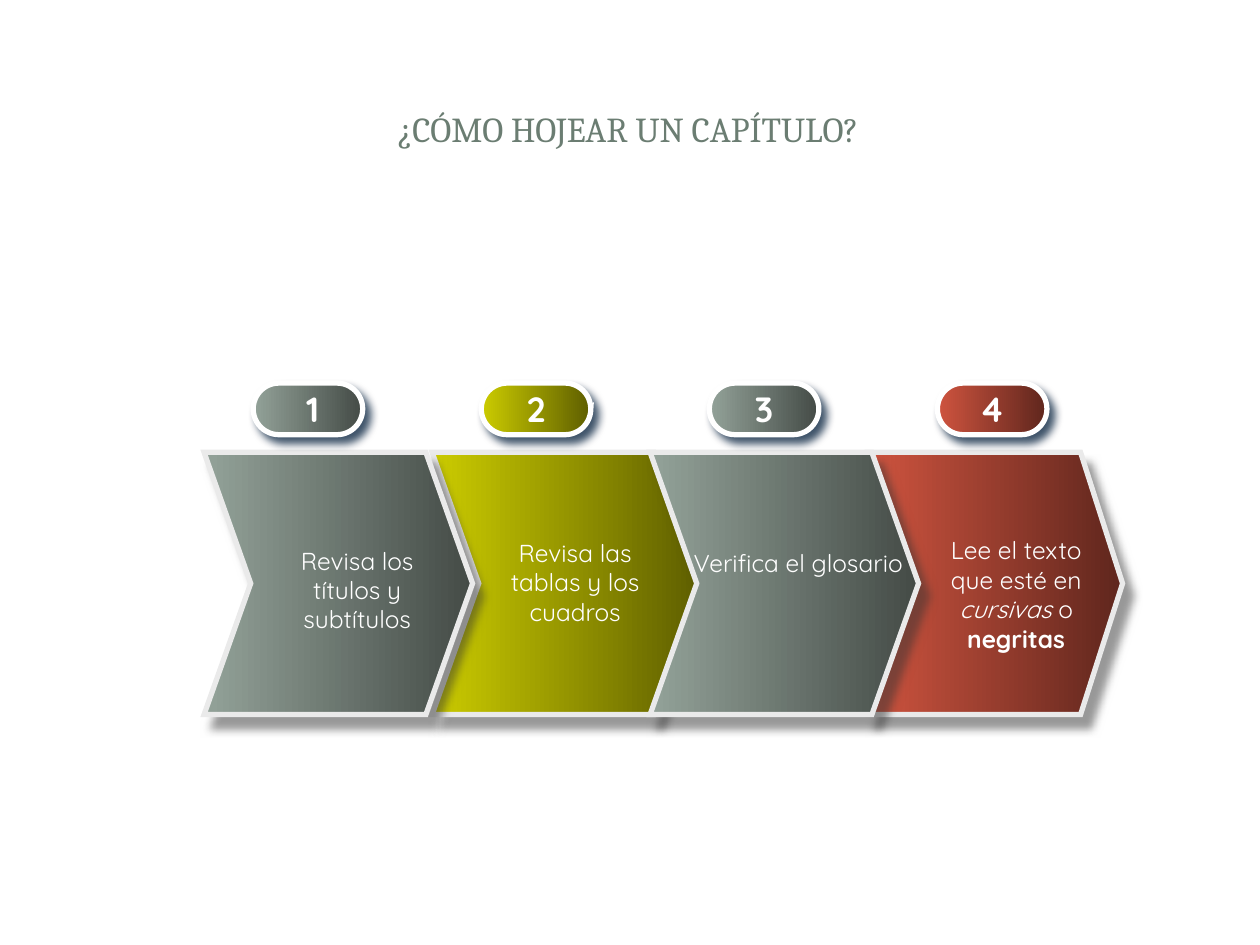
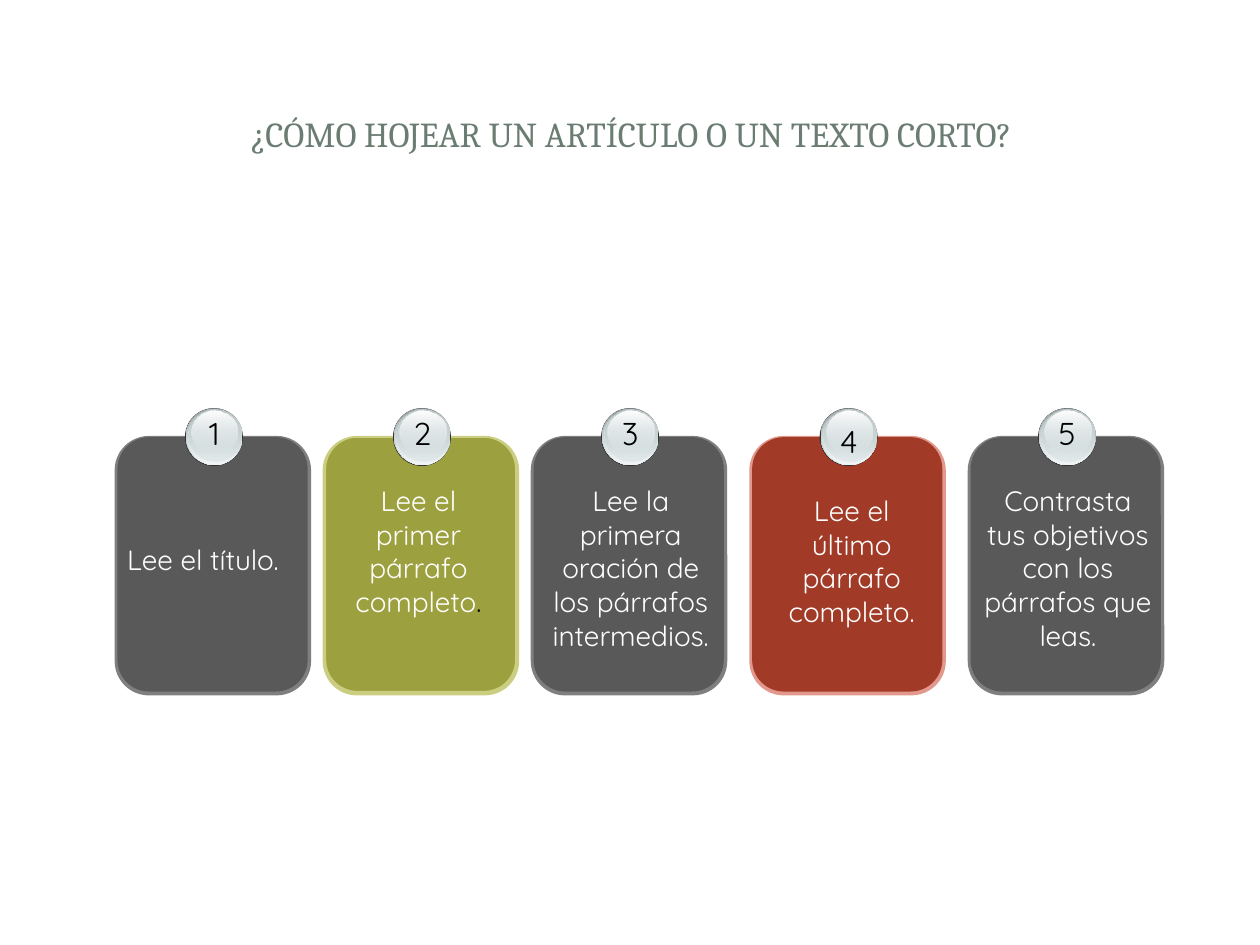
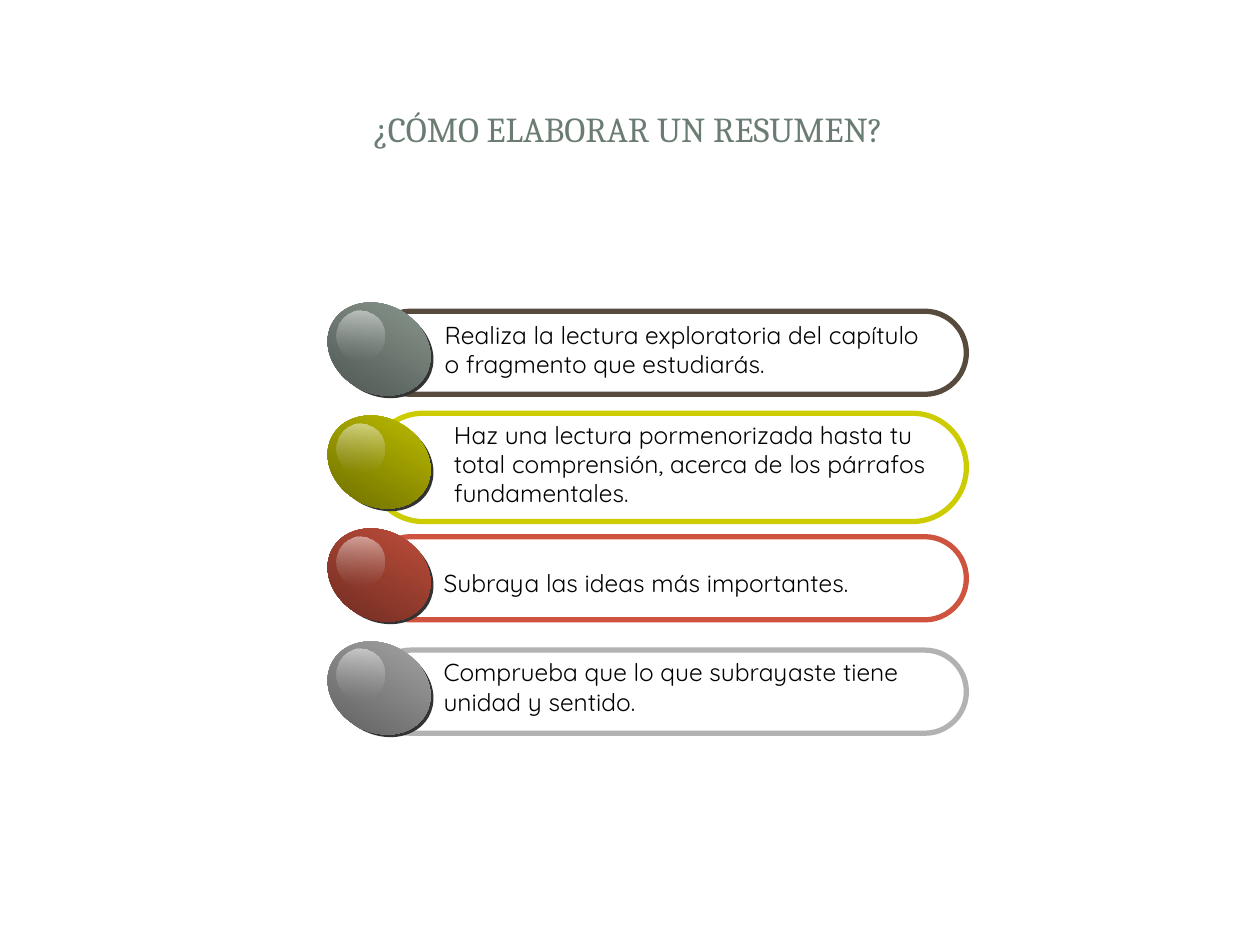
"""Build three slides on skimming chapters, skimming articles and writing summaries."""
from dataclasses import dataclass
from typing import NamedTuple

from lxml.etree import SubElement
from pptx import Presentation
from pptx.dml.color import RGBColor
from pptx.enum.shapes import MSO_SHAPE
from pptx.enum.text import MSO_ANCHOR, PP_ALIGN
from pptx.oxml.ns import qn
from pptx.shapes.autoshape import Shape
from pptx.slide import Slide
from pptx.util import Pt

COLORS = {
    "white": "FFFFFF", "black": "000000", "title": "6B7D72", "edge": "EAEAEA",
    "sage": "93A299", "sage_dark": "444B46", "lime": "CCCC00", "lime_dark": "5E5E00",
    "red": "CF543F", "red_dark": "5F261D", "silver": "B2B2B2", "silver_dark": "525252",
    "brown": "564B3C", "shade": "333333", "navy": "001D3A",
    "gray_card": "595959", "gray_rim": "7F7F7F", "olive_card": "9DA03F",
    "olive_rim": "CBCE81", "brick_card": "A23A28", "brick_rim": "E2988C",
    "bead_deep": "99A1A2", "bead": "D6E1E2", "bead_light": "F2F5F5",
    "bead_mid": "C1CBCC", "gloss_end": "B6B6B6",
}
HEADING_FONT = "Cambria"
BODY_FONT = "Quicksand"


class Area(NamedTuple):
    left: float
    top: float
    width: float
    height: float


class Gradient(NamedTuple):
    start: str
    end: str
    angle: int = 90
    start_alpha: int = 100
    end_alpha: int = 100


class Shadow(NamedTuple):
    color: str
    alpha: int
    blur: float
    distance: float
    angle: int


class Span(NamedTuple):
    text: str
    color: str | None = None
    bold: bool = False
    italic: bool = False


@dataclass
class Step:
    number: str
    tone: str
    left: float
    width: float
    notch: float
    caption: Area
    spans: list[Span]


@dataclass
class Card:
    number: str
    tone: str
    left: float
    caption: Area
    spans: list[Span]
    number_top: float = 233.3
    align: PP_ALIGN = PP_ALIGN.CENTER
    outline: str | None = None


@dataclass
class Row:
    tone: str
    outline: str
    top: float
    height: float
    caption: Area
    lines: list[str]
    align: PP_ALIGN = PP_ALIGN.LEFT


TITLE_AREA = Area(33.84, 32.4, 650.16, 82.08)
CHEVRON_SHADOW = Shadow("shade", 50, 5, 8.6, 54)
PILL_SHADOW = Shadow("navy", 75, 5, 5, 53)
BEAD_LAYERS = [
    (Area(40.2, 233.2, 33.1, 33.1), "shade"),
    (Area(40.7, 233.3, 32.4, 32.4), Gradient("bead_deep", "bead")),
    (Area(41, 233.5, 31.7, 31.7), Gradient("bead", "bead_light", start_alpha=0)),
    (Area(42.2, 234, 30.2, 29.5), Gradient("bead_mid", "bead", end_alpha=48)),
    (Area(43.9, 234.7, 26.6, 23.8), Gradient("white", "bead", end_alpha=38)),
]
STEPS = [
    Step(" 1", "sage", 116.64, 153.4, 0.178, Area(144.7, 308.2, 118.8, 58.3),
         [Span("Revisa los títulos y subtítulos")]),
    Step("2", "lime", 246.96, 153.4, 0.178, Area(269.3, 303.8, 118.8, 58.3),
         [Span("Revisa las tablas y los cuadros")]),
    Step("3", "sage", 371.52, 153.4, 0.178, Area(388.1, 309.6, 136.1, 41),
         [Span("Verifica el glosario")]),
    Step("4", "red", 496.08, 145.4, 0.165, Area(524.2, 302.4, 113, 74.9),
         [Span("Lee el texto que esté en "), Span("cursivas", italic=True),
          Span(" o "), Span("negritas", bold=True)]),
]
STEP_DRAW_ORDER = (3, 1, 0, 2)
CARDS = [
    Card("1", "gray", 65.5, Area(65.5, 306.7, 106.6, 26.6),
         [Span("Lee el título.")], align=PP_ALIGN.LEFT),
    Card("2", "olive", 184.4, Area(185.8, 272.9, 106.6, 85),
         [Span("Lee el primer párrafo completo"), Span(".", "black")], outline="olive_rim"),
    Card("3", "gray", 303.3, Area(304.6, 272.9, 111.6, 104.4),
         [Span("Lee la primera oración de los párrafos intermedios.")]),
    Card("4", "brick", 428.2, Area(433.4, 278.6, 106.6, 85),
         [Span("Lee el último párrafo completo.")], number_top=237.6),
    Card("5", "gray", 553, Area(554.4, 272.9, 111.6, 104.4),
         [Span("Contrasta tus objetivos con los párrafos que leas.")]),
]
ROWS = [
    Row("sage", "brown", 177.84, 47.5, Area(247, 179.3, 304.6, 41),
        ["Realiza la lectura exploratoria del capítulo", "o fragmento que estudiarás."],
        PP_ALIGN.JUSTIFY),
    Row("lime", "lime", 236.16, 61.9, Area(252.3, 236.2, 306.7, 58.3),
        ["Haz una lectura pormenorizada hasta tu",
         "total comprensión, acerca de los párrafos", "fundamentales."],
        PP_ALIGN.JUSTIFY),
    Row("red", "red", 306.72, 47.5, Area(246.4, 321.1, 255.6, 24.5),
        ["Subraya las ideas más importantes."]),
    Row("silver", "silver", 371.52, 47.5, Area(246.4, 372.2, 295.2, 41),
        ["Comprueba que lo que subrayaste tiene", "unidad y sentido."]),
]


def rgb(name: str) -> RGBColor:
    """Look up a named colour."""
    return RGBColor.from_string(COLORS[name])


def add_color(parent, name: str, alpha: int) -> None:
    """Append a colour with its opacity to an XML element."""
    color = SubElement(parent, qn("a:srgbClr"), val=COLORS[name])
    if alpha < 100:
        SubElement(color, qn("a:alpha"), val=str(alpha * 1000))


def paint(shape: Shape, fill: str | Gradient | None, alpha: int) -> None:
    """Fill a shape with a colour, a gradient or nothing."""
    if fill is None:
        shape.fill.background()
        return
    shape.fill.solid()
    if isinstance(fill, str):
        shape.fill.fore_color.rgb = rgb(fill)
        if alpha < 100:
            color = shape._element.spPr.find(qn("a:solidFill"))[0]
            SubElement(color, qn("a:alpha"), val=str(alpha * 1000))
        return
    properties = shape._element.spPr
    solid = properties.find(qn("a:solidFill"))
    gradient = solid.makeelement(qn("a:gradFill"), {"rotWithShape": "1"})
    stops = SubElement(gradient, qn("a:gsLst"))
    for position, name, opacity in ((0, fill.start, fill.start_alpha),
                                    (100000, fill.end, fill.end_alpha)):
        add_color(SubElement(stops, qn("a:gs"), pos=str(position)), name, opacity)
    SubElement(gradient, qn("a:lin"), ang=str(fill.angle * 60000), scaled="0")
    properties.replace(solid, gradient)


def add_box(page: Slide, kind: MSO_SHAPE, area: Area, fill: str | Gradient | None, *,
            alpha: int = 100, line: str | None = None, line_width: float = 3,
            adjust: float | None = None, rotation: float = 0,
            shadow: Shadow | None = None) -> Shape:
    """Draw a preset shape."""
    box = page.shapes.add_shape(kind, *map(Pt, area))
    box.shadow.inherit = False
    box.rotation = rotation
    if adjust is not None:
        box.adjustments[0] = adjust
    paint(box, fill, alpha)
    if line:
        box.line.color.rgb = rgb(line)
        box.line.width = Pt(line_width)
        SubElement(box._element.spPr.find(qn("a:ln")), qn("a:miter"), lim="800000")
    else:
        box.line.fill.background()
    if shadow:
        effects = box._element.spPr.find(qn("a:effectLst"))
        outer = SubElement(effects, qn("a:outerShdw"), blurRad=str(Pt(shadow.blur)),
                           dist=str(Pt(shadow.distance)), dir=str(shadow.angle * 60000),
                           algn="ctr", rotWithShape="0")
        add_color(outer, shadow.color, shadow.alpha)
    return box


def write(box: Shape, paragraphs: list[list[Span]], *, size: float, color: str,
          font: str = BODY_FONT, align: PP_ALIGN = PP_ALIGN.CENTER,
          anchor: MSO_ANCHOR = MSO_ANCHOR.TOP, wrap: bool = True) -> None:
    """Write formatted paragraphs into a box."""
    frame = box.text_frame
    frame.word_wrap = wrap
    frame.vertical_anchor = anchor
    for index, spans in enumerate(paragraphs):
        para = frame.add_paragraph() if index else frame.paragraphs[0]
        para.alignment = align
        for span in spans:
            run = para.add_run()
            run.text = span.text
            run.font.name = font
            run.font.size = Pt(size)
            run.font.bold = span.bold
            run.font.italic = span.italic
            run.font.color.rgb = rgb(span.color or color)


def add_text_box(page: Slide, area: Area) -> Shape:
    """Add an empty text box."""
    return page.shapes.add_textbox(*map(Pt, area))


def add_page(deck, title: str, title_area: Area = TITLE_AREA) -> Slide:
    """Add a slide with the shared frame and title."""
    page = deck.slides.add_slide(deck.slide_layouts[6])
    add_box(page, MSO_SHAPE.ROUNDED_RECTANGLE, Area(7.2, 7.9, 705.6, 524.9), "white",
            adjust=0.017)
    add_box(page, MSO_SHAPE.RECTANGLE, Area(21.6, 21.6, 676.8, 104.4), "white", alpha=83)
    add_box(page, MSO_SHAPE.RECTANGLE, Area(29.5, 29.5, 660.2, 87.8), "white")
    write(add_text_box(page, title_area), [[Span(title)]], size=20, color="title",
          font=HEADING_FONT, anchor=MSO_ANCHOR.MIDDLE)
    return page


def add_step(page: Slide, index: int) -> None:
    """Draw a chevron and its numbered pill."""
    step = STEPS[index]
    fill = Gradient(step.tone, f"{step.tone}_dark", angle=0)
    add_box(page, MSO_SHAPE.CHEVRON, Area(step.left, 258.5, step.width, 149.8), fill,
            line="edge", adjust=step.notch, shadow=CHEVRON_SHADOW)
    pill = add_box(page, MSO_SHAPE.ROUNDED_RECTANGLE,
                   Area(144.72 + 130.32 * index, 218.9, 62.6, 29.5), fill,
                   line="white", adjust=0.5, shadow=PILL_SHADOW)
    write(pill, [[Span(step.number, bold=True)]], size=20, color="white",
          anchor=MSO_ANCHOR.MIDDLE, wrap=False)


def add_card(page: Slide, card: Card) -> None:
    """Draw a card with its numbered bead."""
    add_box(page, MSO_SHAPE.ROUNDED_RECTANGLE, Area(card.left, 249.1, 112.3, 148.3),
            f"{card.tone}_rim", adjust=0.175)
    add_box(page, MSO_SHAPE.ROUNDED_RECTANGLE, Area(card.left + 1.6, 249.8, 108.7, 145.4),
            f"{card.tone}_card", adjust=0.167, line=card.outline, line_width=0.75)
    for area, fill in BEAD_LAYERS:
        add_box(page, MSO_SHAPE.OVAL, area._replace(left=card.left + area.left), fill)
    number_area = Area(card.left + 44.7, card.number_top, 24.5, 28.8)
    write(add_text_box(page, number_area), [[Span(card.number)]], size=18, color="black",
          wrap=False)
    write(add_text_box(page, card.caption), [card.spans], size=16, color="white",
          align=card.align)


def add_row(page: Slide, row: Row, bead_top: float) -> None:
    """Draw an outlined pill with a glossy bead and its text."""
    add_box(page, MSO_SHAPE.ROUNDED_RECTANGLE, Area(210.96, row.top, 341.3, row.height),
            None, line=row.outline, adjust=0.5)
    add_box(page, MSO_SHAPE.OVAL, Area(187.7, bead_top + 1.5, 61.2, 50.4), "shade",
            rotation=29.3)
    add_box(page, MSO_SHAPE.OVAL, Area(186, bead_top, 61.2, 50.4),
            Gradient(row.tone, f"{row.tone}_dark"), rotation=29.3)
    add_box(page, MSO_SHAPE.OVAL, Area(192.2, bead_top + 3, 27.4, 28.8),
            Gradient("white", "gloss_end", start_alpha=50, end_alpha=0))
    write(add_text_box(page, row.caption), [[Span(line)] for line in row.lines],
          size=14, color="black", align=row.align)


def main() -> None:
    """Build and save the deck."""
    deck = Presentation()
    deck.slide_width, deck.slide_height = Pt(720), Pt(540)

    page = add_page(deck, "¿CÓMO HOJEAR UN CAPÍTULO?")
    for index in STEP_DRAW_ORDER:
        add_step(page, index)
    for step in STEPS:
        write(add_text_box(page, step.caption), [step.spans], size=14, color="white")

    page = add_page(deck, "¿CÓMO HOJEAR UN ARTÍCULO O UN TEXTO CORTO?",
                    Area(36.72, 37.44, 648, 77.76))
    for card in CARDS:
        add_card(page, card)

    page = add_page(deck, "¿CÓMO ELABORAR UN RESUMEN?")
    for index, row in enumerate(ROWS):
        add_row(page, row, 174.24 + 64.56 * index)

    deck.save("out.pptx")


if __name__ == "__main__":
    main()
